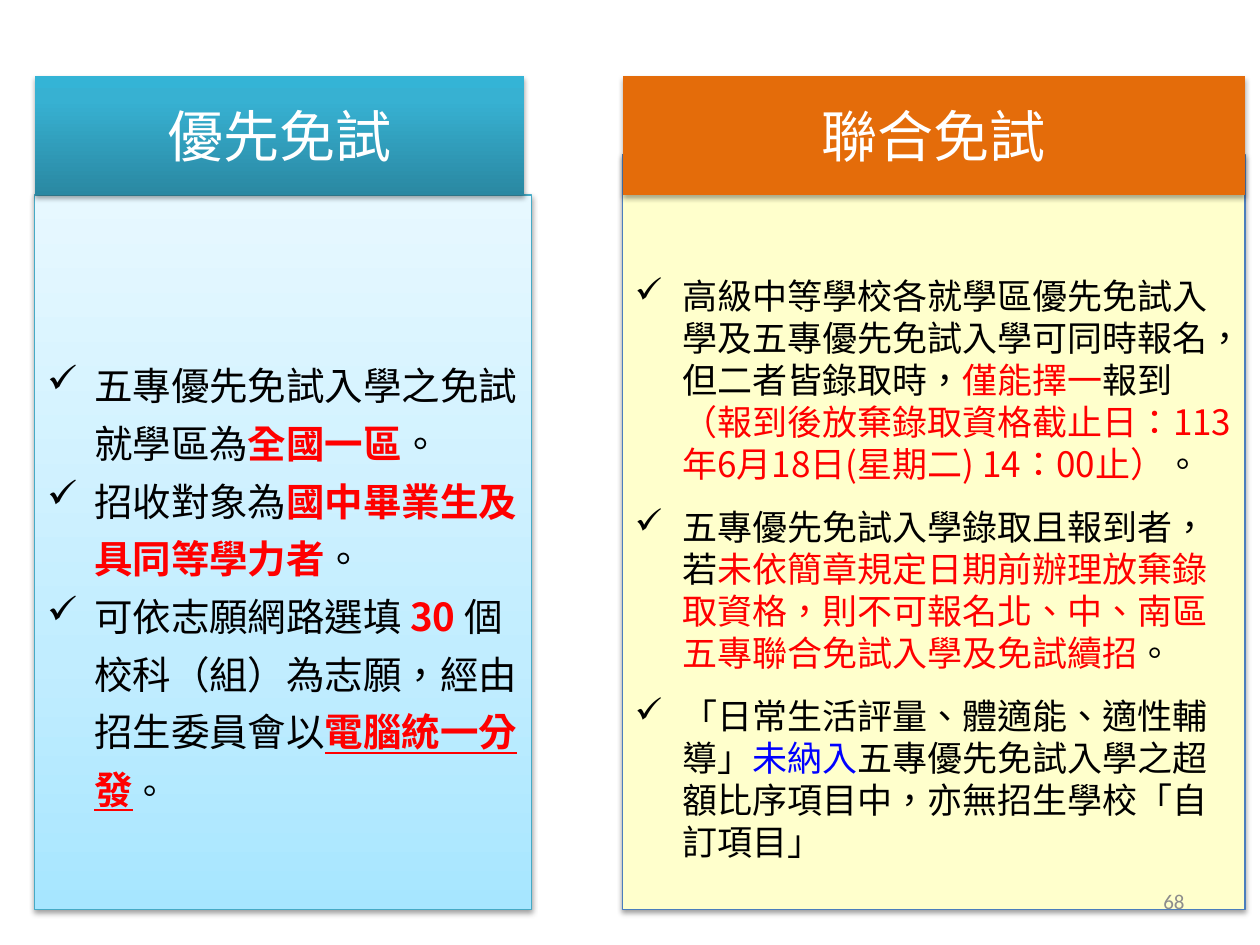
from dataclasses import dataclass
from typing import Optional

from lxml.etree import SubElement
from pptx import Presentation
from pptx.dml.color import RGBColor
from pptx.enum.shapes import MSO_SHAPE
from pptx.enum.text import MSO_ANCHOR, PP_ALIGN
from pptx.oxml import parse_xml
from pptx.oxml.ns import nsdecls, qn
from pptx.util import Cm, Pt

COLOURS = {
    "black": "000000", "white": "FFFFFF", "red": "FF0000", "blue": "0000FF",
    "grey": "8C8C8C", "orange": "E46C0A", "cream": "FFFFCC",
    "aqua_edge": "46AAC5", "cream_edge": "4B7EBC",
}
AQUA_HEADER = ((0, "2A88A2"), (80, "37B1D2"), (100, "34B4D6"))
AQUA_BODY = ((0, "A7E6FF"), (35, "C1EDFF"), (100, "E7F8FF"))
CJK_FONT = "Noto Sans CJK SC"
INDENT = Cm(0.95)


@dataclass
class Span:
    text: str
    colour: str = "black"
    bold: bool = False
    underline: bool = False
    size: Optional[float] = None


@dataclass
class Panel:
    left: float
    top: float
    width: float
    height: float
    fill: str | tuple
    edge: Optional[str] = None
    shadow_alpha: int = 35
    shadow_distance: float = 1.8


def rgb(name: str) -> RGBColor:
    return RGBColor.from_string(COLOURS[name])


def gradient_xml(stops: tuple) -> str:
    marks = "".join(
        f'<a:gs pos="{position * 1000}"><a:srgbClr val="{colour}"/></a:gs>'
        for position, colour in stops)
    return (f'<a:gradFill {nsdecls("a")} rotWithShape="1"><a:gsLst>{marks}</a:gsLst>'
            '<a:lin ang="16200000" scaled="0"/></a:gradFill>')


def add_panel(page, panel: Panel):
    """Draw a rectangle with its fill, edge and soft shadow."""
    box = page.shapes.add_shape(
        MSO_SHAPE.FLOWCHART_PROCESS, Cm(panel.left), Cm(panel.top),
        Cm(panel.width), Cm(panel.height))
    properties = box.fill._xPr
    if isinstance(panel.fill, tuple):
        properties.find(qn("a:prstGeom")).addnext(parse_xml(gradient_xml(panel.fill)))
    else:
        box.fill.solid()
        box.fill.fore_color.rgb = rgb(panel.fill)
    if panel.edge:
        box.line.color.rgb = rgb(panel.edge)
        box.line.width = Pt(0.75)
    else:
        box.line.fill.background()
    box.shadow.inherit = False
    shadow = SubElement(
        properties.find(qn("a:effectLst")), qn("a:outerShdw"),
        blurRad=str(Pt(3.1)), dist=str(Pt(panel.shadow_distance)),
        dir="5400000", rotWithShape="0")
    colour = SubElement(shadow, qn("a:srgbClr"), val=COLOURS["black"])
    SubElement(colour, qn("a:alpha"), val=str(panel.shadow_alpha * 1000))
    return box


def add_text(box, paragraphs: list[list[Span]], *, size: float,
             font: str = CJK_FONT, align=PP_ALIGN.LEFT, bullet: bool = False,
             line_spacing: float = 1.0, gap: float = 0, top_inset: float = 0.13) -> None:
    """Fill a box with paragraphs of formatted spans."""
    frame = box.text_frame
    frame.word_wrap = True
    frame.vertical_anchor = MSO_ANCHOR.MIDDLE
    frame.margin_top = Cm(top_inset)
    for index, spans in enumerate(paragraphs):
        para = frame.add_paragraph() if index else frame.paragraphs[0]
        para.alignment = align
        para.line_spacing = line_spacing
        para.space_before = Pt(gap if index else 0)
        if bullet:
            settings = para._p.get_or_add_pPr()
            settings.set("marL", str(INDENT))
            settings.set("indent", str(-INDENT))
            SubElement(settings, qn("a:buChar"), char="✓")
        for span in spans:
            run = para.add_run()
            run.text = span.text
            run.font.name = font
            run.font.size = Pt(span.size or size)
            run.font.bold = span.bold
            run.font.underline = span.underline
            run.font.color.rgb = rgb(span.colour)
            details = run._r.get_or_add_rPr()
            details.set("lang", "zh-TW")
            details.find(qn("a:latin")).addnext(
                parse_xml(f'<a:ea {nsdecls("a")} typeface="{font}"/>'))


PRIORITY = [
    [Span("五專優先免試入學之免試就學區為"), Span("全國一區", "red", True), Span("。")],
    [Span("招收對象為"), Span("國中畢業生及具同等學力者", "red", True), Span("。")],
    [Span("可依志願網路選填 "), Span("30 ", "red", True),
     Span("個校科（組）為志願，經由招生委員會以"),
     Span("電腦統一分發", "red", True, True), Span("。", size=20)],
]
JOINT = [
    [Span("高級中等學校各就學區優先免試入學及五專優先免試入學可同時報名，但二者皆錄取時，"),
     Span("僅能擇一", "red"), Span("報到"),
     Span("（報到後放棄錄取資格截止日：113年6月18日(星期二) 14：00止）", "red"), Span("。")],
    [Span("五專優先免試入學錄取且報到者，若"),
     Span("未依簡章規定日期前辦理放棄錄取資格，則不可報名北、中、南區五專聯合免試入學及免試續招", "red"),
     Span("。")],
    [Span("「日常生活評量、體適能、適性輔導」"), Span("未納入", "blue"),
     Span("五專優先免試入學之超額比序項目中，亦無招生學校「自訂項目」")],
]


def main() -> None:
    deck = Presentation()
    deck.slide_width, deck.slide_height = Cm(25.4), Cm(19.05)
    page = deck.slides.add_slide(deck.slide_layouts[6])

    # Body panels
    priority_box = add_panel(
        page, Panel(0.7, 3.93, 10.01, 14.41, AQUA_BODY, "aqua_edge", 38, 1.6))
    add_text(priority_box, PRIORITY, size=22, bullet=True,
             line_spacing=1.25, top_inset=1.3)
    joint_box = add_panel(
        page, Panel(12.55, 3.12, 12.55, 15.22, "cream", "cream_edge", 38, 1.6))
    add_text(joint_box, JOINT, size=20, bullet=True, gap=12, top_inset=1.6)

    # Headers
    headers = (
        ("優先免試", Panel(0.7, 1.53, 9.86, 2.4, AQUA_HEADER)),
        ("聯合免試", Panel(12.55, 1.53, 12.55, 2.4, "orange")),
    )
    for title, panel in headers:
        add_text(add_panel(page, panel), [[Span(title, "white")]],
                 size=32, align=PP_ALIGN.CENTER)

    # Page number
    number_box = page.shapes.add_textbox(Cm(18.2), Cm(17.66), Cm(5.93), Cm(1.01))
    add_text(number_box, [[Span("68", "grey")]], size=12,
             font="Calibri", align=PP_ALIGN.RIGHT)

    deck.save("out.pptx")


if __name__ == "__main__":
    main()
